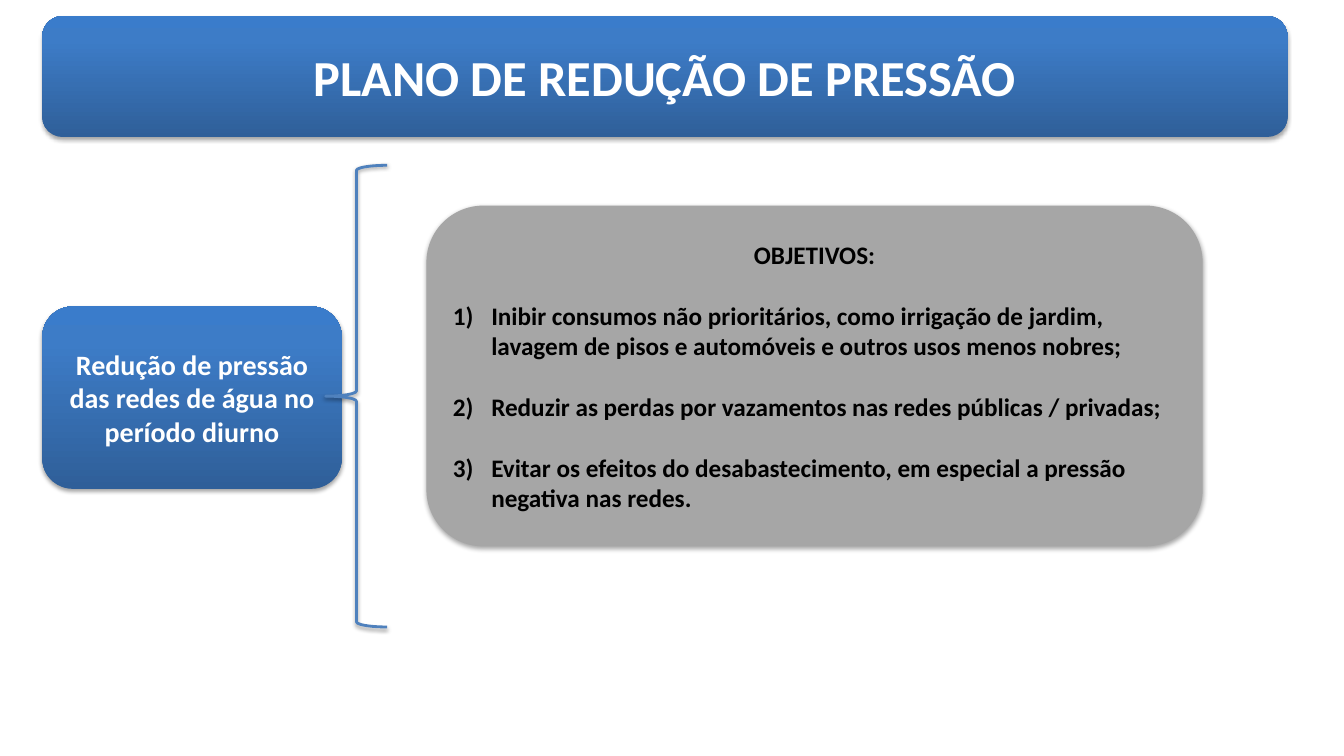
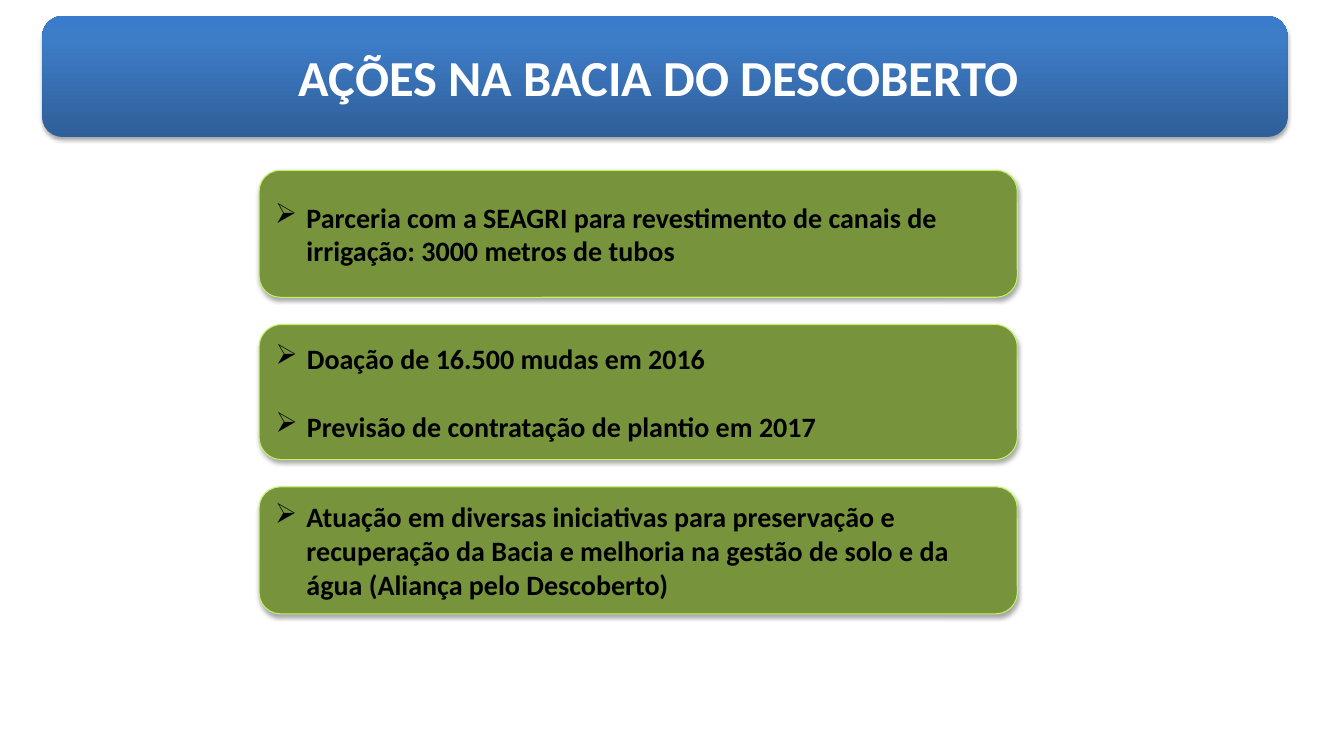
import copy

import lxml.etree
import pptx
import pptx.dml.color
import pptx.enum.shapes
import pptx.enum.text
import pptx.oxml.ns
import pptx.util

RGB = pptx.dml.color.RGBColor
Kind = pptx.enum.shapes.MSO_SHAPE
Align = pptx.enum.text.PP_ALIGN
Pt = pptx.util.Pt
qn = pptx.oxml.ns.qn

WHITE = RGB(0xFF, 0xFF, 0xFF)
BLACK = RGB(0x00, 0x00, 0x00)
GRAY = RGB(0xA6, 0xA6, 0xA6)
GREEN = RGB(0x77, 0x93, 0x3C)
LIME = RGB(0xC3, 0xF2, 0x63)
BLUE = RGB(0x4F, 0x81, 0xBD)
FADE = ((0, RGB(0x2F, 0x5F, 0x99)),
        (0.8, RGB(0x3D, 0x7C, 0xC7)),
        (1, RGB(0x3A, 0x7C, 0xCB)))

NUMBER = ("a:buAutoNum", {"type": "arabicParenR"})
ARROW = ("a:buChar", {"char": "➢"})


def apply(item, form):
    for name, value in form.items():
        setattr(item, name, value)


class Deck:
    """Holds the style and the current slide; places are percent of its size."""

    face = {"name": "Calibri", "bold": True}
    frame = {"word_wrap": True,
             "vertical_anchor": pptx.enum.text.MSO_ANCHOR.MIDDLE}
    edge = 3.15

    def __init__(self):
        self.show = pptx.Presentation()
        apply(self.show, {"slide_width": pptx.util.Inches(13.33),
                          "slide_height": pptx.util.Inches(7.5)})

    def start(self, title):
        self.slide = self.show.slides.add_slide(self.show.slide_layouts[6])
        band = self.panel((self.edge, 2.13, 92.65, 16))
        self.label(band, title, 36, WHITE)

    def shape(self, kind, place, dark=35, drop=1.8):
        """Add a preset shape with a soft shadow below it."""
        wide, high = self.show.slide_width, self.show.slide_height
        spot = [round(part * size / 100)
                for part, size in zip(place, (wide, high, wide, high))]
        item = self.slide.shapes.add_shape(kind, *spot)
        item.shadow.inherit = False
        effect = item.element.spPr.find(qn("a:effectLst"))
        shade = lxml.etree.SubElement(effect, qn("a:outerShdw"), {
            "blurRad": str(Pt(3.1)), "dist": str(Pt(drop)),
            "dir": "5400000", "rotWithShape": "0"})
        tint = lxml.etree.SubElement(shade, qn("a:srgbClr"), {"val": "000000"})
        lxml.etree.SubElement(tint, qn("a:alpha"), {"val": str(dark * 1000)})
        return item

    def panel(self, place, fill=None, line=None):
        """Add a rounded box; with no fill given it gets the blue fade."""
        box = self.shape(Kind.ROUNDED_RECTANGLE, place)
        if fill is None:
            self.fade(box)
        else:
            box.fill.solid()
            box.fill.fore_color.rgb = fill
        if line is None:
            box.line.fill.background()
        else:
            box.line.color.rgb = line
            box.line.width = Pt(0.75)
        return box

    def fade(self, box):
        box.fill.gradient()
        box.fill.gradient_angle = 90
        stops = box.element.spPr.find(".//" + qn("a:gsLst"))
        stops.insert(1, copy.deepcopy(stops[0]))
        for stop, (place, color) in zip(box.fill.gradient_stops, FADE):
            stop.position = place
            stop.color.rgb = color

    def brace(self, place):
        mark = self.shape(Kind.LEFT_BRACE, place, dark=38, drop=1.6)
        mark.fill.background()
        mark.line.color.rgb = BLUE
        mark.line.width = Pt(2)

    def label(self, box, text, size, color):
        apply(box.text_frame, self.frame)
        para = box.text_frame.paragraphs[0]
        para.alignment = Align.CENTER
        self.run(para, text, size, color)

    def items(self, box, lines, size, bullet, dent, gap):
        """Add bulleted lines below any text that the box already has."""
        apply(box.text_frame, self.frame)
        for text in lines:
            para = box.text_frame.paragraphs[-1]
            if para.runs:
                para = box.text_frame.add_paragraph()
                para.space_before = Pt(gap)
            para.alignment = Align.LEFT
            props = para._p.get_or_add_pPr()
            inch = pptx.util.Inches(dent)
            props.set("marL", str(inch))
            props.set("indent", str(-inch))
            tag, form = bullet
            lxml.etree.SubElement(props, qn(tag), form)
            self.run(para, text, size, BLACK)

    def run(self, para, text, size, color):
        run = para.add_run()
        run.text = text
        apply(run.font, {**self.face, "size": Pt(size)})
        run.font.color.rgb = color


def plan(deck):
    deck.start("PLANO DE REDUÇÃO DE PRESSÃO")
    cause = deck.panel((deck.edge, 40.53, 22.28, 24.13))
    deck.label(cause, "Redução de pressão das redes de água no período diurno",
               20, WHITE)
    deck.brace((24.23, 21.87, 4.58, 61.07))
    goals = deck.panel((31.73, 27.2, 57.76, 45.07), GRAY)
    deck.label(goals, "OBJETIVOS:", 18, BLACK)
    deck.items(goals, (
        "Inibir consumos não prioritários, como irrigação de jardim, "
        "lavagem de pisos e automóveis e outros usos menos nobres;",
        "Reduzir as perdas por vazamentos nas redes públicas / privadas;",
        "Evitar os efeitos do desabastecimento, em especial a pressão "
        "negativa nas redes.",
    ), 18, NUMBER, dent=0.38, gap=22)


def basin(deck):
    deck.start("AÇÕES NA BACIA DO DESCOBERTO ")
    top, gap = 22.53, 3.6
    for high, lines in (
        (16.8, ("Parceria com a SEAGRI para revestimento de canais de "
                "irrigação: 3000 metros de tubos",)),
        (17.87, ("Doação de 16.500 mudas em 2016",
                 "Previsão de contratação de plantio em 2017")),
        (16.8, ("Atuação em diversas iniciativas para preservação e "
                "recuperação da Bacia e melhoria na gestão de solo e da "
                "água (Aliança pelo Descoberto)",)),
    ):
        box = deck.panel((19.28, top, 56.41, high), GREEN, LIME)
        deck.items(box, lines, 20, ARROW, dent=0.31, gap=24.4)
        top += high + gap


def main():
    deck = Deck()
    plan(deck)
    basin(deck)
    deck.show.save("out.pptx")


if __name__ == "__main__":
    main()
